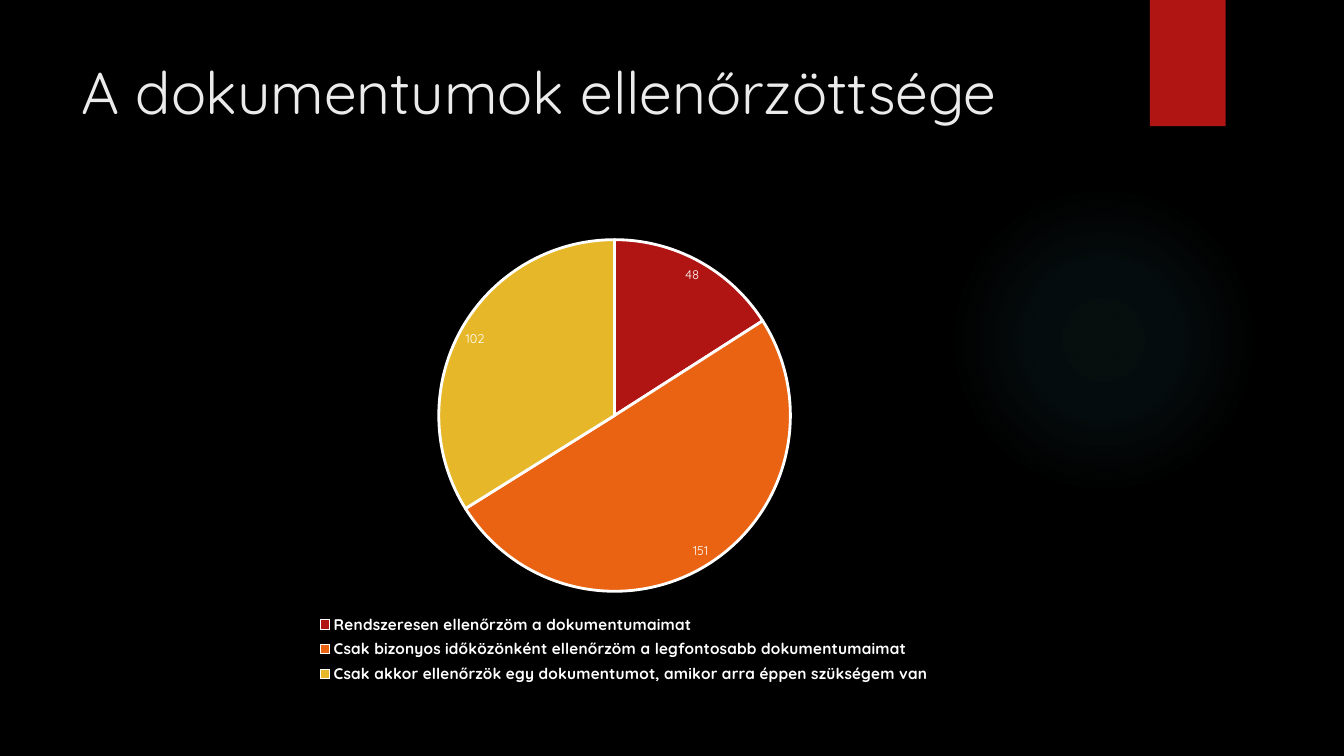
from dataclasses import dataclass

from lxml import etree
from pptx import Presentation
from pptx.chart.chart import Chart
from pptx.chart.data import CategoryChartData
from pptx.dml.color import RGBColor
from pptx.enum.chart import XL_CHART_TYPE, XL_LABEL_POSITION, XL_LEGEND_POSITION
from pptx.enum.shapes import MSO_SHAPE
from pptx.enum.text import MSO_ANCHOR, PP_ALIGN
from pptx.oxml import parse_xml
from pptx.oxml.ns import qn
from pptx.slide import Slide
from pptx.util import Cm, Pt

PIE = XL_CHART_TYPE.PIE
BEST_FIT = XL_LABEL_POSITION.BEST_FIT
BOTTOM = XL_LEGEND_POSITION.BOTTOM
OVAL, RECTANGLE = MSO_SHAPE.OVAL, MSO_SHAPE.RECTANGLE
TOP, LEFT = MSO_ANCHOR.TOP, PP_ALIGN.LEFT
TITLE_ONLY = 5
A_NS = "http://schemas.openxmlformats.org/drawingml/2006/main"


@dataclass(frozen=True)
class Theme:
    font: str = "Quicksand"
    background: str = "000000"
    title: str = "EBEBEB"
    text: str = "FFFFFF"
    accent: str = "B01513"
    glow: str = "50B9C1"
    title_size: int = 42
    chart_size: int = 10
    legend_size: int = 11
    label_size: int = 9


@dataclass(frozen=True)
class Box:
    """Place and size in centimetres."""
    left: float
    top: float
    width: float
    height: float

    def emu(self) -> tuple:
        return Cm(self.left), Cm(self.top), Cm(self.width), Cm(self.height)


@dataclass(frozen=True)
class Decoration:
    shape: int
    box: Box
    color: str
    glowing: bool = False


@dataclass(frozen=True)
class Answer:
    text: str
    count: int
    color: str


THEME = Theme()
TITLE_BOX = Box(1.8, 1.27, 26.14, 3.89)
CHART_BOX = Box(3.07, 5.69, 24.84, 11.66)
GLOW_STOPS = ((0, 7), (36, 6), (69, 0))  # position and opacity, percent
# Shares of the chart area: x, y, w, h
PIE_AREA = (0.32, 0.03, 0.36, 0.76)
LEGEND_AREA = (0.18, 0.83, 0.66, 0.17)

DECORATIONS = (
    Decoration(OVAL, Box(23.9, 4.65, 7.82, 7.82), THEME.glow, glowing=True),
    Decoration(RECTANGLE, Box(28.98, 0, 1.91, 3.18), THEME.accent),
)
ANSWERS = (
    Answer("Rendszeresen ellenőrzöm a dokumentumaimat", 48, THEME.accent),
    Answer("Csak bizonyos időközönként ellenőrzöm a legfontosabb dokumentumaimat",
           151, "EA6312"),
    Answer("Csak akkor ellenőrzök egy dokumentumot, amikor arra éppen szükségem van",
           102, "E6B729"),
)


def rgb(color: str) -> RGBColor:
    return RGBColor.from_string(color)


def set_font(font, size: int, color: str, bold: bool = False) -> None:
    values = {"name": THEME.font, "size": Pt(size), "bold": bold}
    for name, value in values.items():
        setattr(font, name, value)
    font.color.rgb = rgb(color)


def add_decoration(s: Slide, item: Decoration) -> None:
    sp = s.shapes.add_shape(item.shape, *item.box.emu())
    sp.shadow.inherit = False
    sp.line.fill.background()
    sp.fill.solid()
    sp.fill.fore_color.rgb = rgb(item.color)
    if item.glowing:
        stops = "".join(
            f'<a:gs pos="{pos * 1000}"><a:srgbClr val="{item.color}">'
            f'<a:alpha val="{alpha * 1000}"/></a:srgbClr></a:gs>'
            for pos, alpha in GLOW_STOPS)
        gradient = parse_xml(
            f'<a:gradFill xmlns:a="{A_NS}"><a:gsLst>{stops}</a:gsLst>'
            '<a:path path="circle"><a:fillToRect l="50000" t="50000" '
            'r="50000" b="50000"/></a:path></a:gradFill>')
        solid = sp.element.spPr.find(qn("a:solidFill"))
        solid.getparent().replace(solid, gradient)


def format_title(s: Slide, text: str) -> None:
    sp = s.shapes.title
    sp.left, sp.top, sp.width, sp.height = TITLE_BOX.emu()
    tf = sp.text_frame
    tf.text = text
    tf.word_wrap = True
    tf.vertical_anchor = TOP
    p = tf.paragraphs[0]
    p.alignment = LEFT
    set_font(p.runs[0].font, THEME.title_size, THEME.title)


def set_layout(parent, index: int, area: tuple, inner: bool = False) -> None:
    for old in parent.findall(qn("c:layout")):
        parent.remove(old)
    layout = etree.Element(qn("c:layout"))
    manual = etree.SubElement(layout, qn("c:manualLayout"))
    values = {"layoutTarget": "inner"} if inner else {}
    values.update(xMode="edge", yMode="edge")
    values.update(zip("xywh", area))
    for name, value in values.items():
        etree.SubElement(manual, qn(f"c:{name}")).set("val", str(value))
    parent.insert(index, layout)


def format_pie(chart: Chart) -> None:
    chart.has_title = False
    set_font(chart.font, THEME.chart_size, THEME.text)
    plot = chart.plots[0]
    plot.vary_by_categories = True
    set_layout(chart.element.chart.plotArea, 0, PIE_AREA, inner=True)

    # Slices
    for i, answer in enumerate(ANSWERS):
        part = plot.series[0].points[i].format
        part.fill.solid()
        part.fill.fore_color.rgb = rgb(answer.color)
        part.line.color.rgb = rgb(THEME.text)
        part.line.width = Pt(2)

    # Value labels
    plot.has_data_labels = True
    labels = plot.data_labels
    labels.show_value = True
    labels.show_percentage = False
    labels.position = BEST_FIT
    set_font(labels.font, THEME.label_size, THEME.text)

    # Legend
    chart.has_legend = True
    legend = chart.legend
    legend.position = BOTTOM
    legend.include_in_layout = False
    set_font(legend.font, THEME.legend_size, THEME.text, bold=True)
    set_layout(chart.element.chart.find(qn("c:legend")), 1, LEGEND_AREA)


def main() -> None:
    prs = Presentation()
    prs.slide_width, prs.slide_height = Cm(33.87), Cm(19.05)
    s = prs.slides.add_slide(prs.slide_layouts[TITLE_ONLY])
    s.background.fill.solid()
    s.background.fill.fore_color.rgb = rgb(THEME.background)

    for item in DECORATIONS:
        add_decoration(s, item)
    format_title(s, "A dokumentumok ellenőrzöttsége")

    data = CategoryChartData()
    data.categories = [answer.text for answer in ANSWERS]
    data.add_series("Series 1", [answer.count for answer in ANSWERS])
    format_pie(s.shapes.add_chart(PIE, *CHART_BOX.emu(), data).chart)
    prs.save("out.pptx")


if __name__ == "__main__":
    main()
